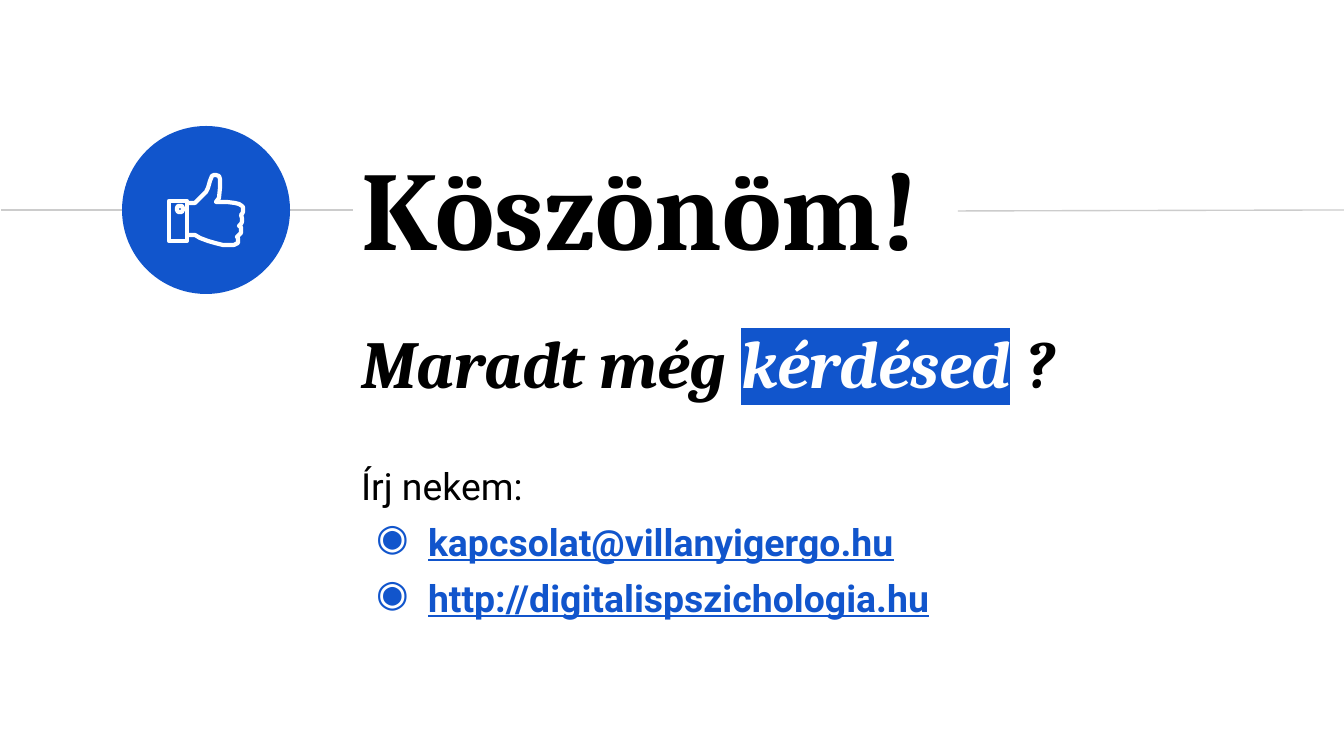
from math import cos, pi, sin

from lxml.etree import SubElement
from pptx import Presentation
from pptx.dml.color import RGBColor
from pptx.enum.shapes import MSO_CONNECTOR as CONN, MSO_SHAPE as SHAPE
from pptx.enum.text import MSO_ANCHOR as ANCHOR, MSO_AUTO_SIZE as AUTOSIZE, PP_ALIGN as ALIGN
from pptx.oxml.ns import qn
from pptx.util import Pt

EMU_PER_PX = 914400 / 134.4
COLORS = {"blue": "1155CC", "rule": "CCCCCC", "black": "000000", "white": "FFFFFF"}
SERIF, SANS = "Cambria", "Roboto"

CUFF = [(169, 201), (169, 241), (187, 241), (187, 201)]
BUTTON = [(round(180 + 3 * cos(k * pi / 6)), round(209 + 3 * sin(k * pi / 6)))
          for k in range(12)]
THUMB = [
    (188, 235), (195, 235), (200, 238), (208, 241), (215, 243), (223, 245),
    (234, 245), (238, 243), (238, 238), (237, 237), (239, 235), (241, 233),
    (241, 227), (239, 226), (241, 224), (242, 222), (242, 218), (241, 215),
    (242, 214), (243, 212), (243, 207), (242, 206), (239, 204), (235, 203),
    (227, 202), (216, 202), (219, 198), (220, 188), (220, 179), (219, 176),
    (216, 175), (214, 175), (212, 176), (210, 181), (208, 188), (206, 192),
    (199, 199), (195, 203), (188, 203),
]


def px(n):
    return round(n * EMU_PER_PX)


def rgb(name):
    return RGBColor.from_string(COLORS[name])


class Deck:
    def __init__(self, width, height):
        self.prs = Presentation()
        self.prs.slide_width, self.prs.slide_height = px(width), px(height)
        self.slide = self.prs.slides.add_slide(self.prs.slide_layouts[5])
        self.shapes = self.slide.shapes

    def frame(self, sp, anchor):
        tf = sp.text_frame
        tf.word_wrap = True
        tf.auto_size = AUTOSIZE.NONE
        tf.vertical_anchor = anchor
        tf.margin_left = tf.margin_right = tf.margin_top = tf.margin_bottom = px(13)
        return tf

    def style(self, r, font, size, color="black", bold=False, italic=False, underline=False):
        f = r.font
        f.name, f.size, f.bold, f.italic, f.underline = font, Pt(size), bold, italic, underline
        f.color.rgb = rgb(color)

    def highlight(self, r, color):
        rpr = r.font._element
        mark = SubElement(rpr, qn("a:highlight"))
        SubElement(mark, qn("a:srgbClr"), val=COLORS[color])
        rpr.find(qn("a:solidFill")).addnext(mark)

    def bullet(self, p, char, color):
        ppr = p._p.get_or_add_pPr()
        ppr.set("marL", str(px(67)))
        ppr.set("indent", str(px(-52)))
        SubElement(SubElement(ppr, qn("a:buClr")), qn("a:srgbClr"), val=COLORS[color])
        SubElement(ppr, qn("a:buChar"), char=char)

    def title(self, text, x, y, w, h):
        sp = self.shapes.title
        sp.left, sp.top, sp.width, sp.height = map(px, (x, y, w, h))
        tf = self.frame(sp, ANCHOR.MIDDLE)
        tf.text = text
        p = tf.paragraphs[0]
        p.alignment = ALIGN.LEFT
        self.style(p.runs[0], SERIF, 60, bold=True)

    def text_box(self, x, y, w, h):
        return self.frame(self.shapes.add_textbox(*map(px, (x, y, w, h))), ANCHOR.TOP)

    def line(self, x1, y1, x2, y2):
        c = self.shapes.add_connector(CONN.STRAIGHT, *map(px, (x1, y1, x2, y2)))
        c.line.color.rgb = rgb("rule")
        c.line.width = Pt(0.75)
        SubElement(c._element.spPr, qn("a:effectLst"))

    def circle(self, x, y, size):
        sp = self.shapes.add_shape(SHAPE.OVAL, *map(px, (x, y, size, size)))
        sp.shadow.inherit = False
        sp.fill.solid()
        sp.fill.fore_color.rgb = rgb("blue")
        sp.line.fill.background()

    def outline(self, *contours, close):
        """Draw the contours as one unfilled white shape."""
        builder = self.shapes.build_freeform(*contours[0][0], scale=EMU_PER_PX)
        for i, points in enumerate(contours):
            if i:
                builder.move_to(*points[0])
            builder.add_line_segments(points[1:], close=close)
        sp = builder.convert_to_shape()
        sp.shadow.inherit = False
        sp.fill.background()
        sp.line.color.rgb = rgb("white")
        sp.line.width = Pt(2.25)


def main():
    deck = Deck(1344, 756)
    deck.title("Köszönöm!", 348, 120, 722, 171)

    tf = deck.text_box(348, 308, 738, 330)
    p = tf.paragraphs[0]
    p.space_before = Pt(6)
    for text, color in (("Maradt még ", "black"), ("kérdésed", "white"), (" ?", "black")):
        r = p.add_run()
        r.text = text
        deck.style(r, SERIF, 36, color, bold=True, italic=True)
        if color == "white":
            deck.highlight(r, "blue")

    p = tf.add_paragraph()
    p.text = "Írj nekem:"
    p.space_before = Pt(33)
    deck.style(p.runs[0], SANS, 20)
    for address in ("kapcsolat@villanyigergo.hu", "http://digitalispszichologia.hu"):
        p = tf.add_paragraph()
        p.text = address
        p.space_before = Pt(6)
        deck.bullet(p, "◉", "blue")
        deck.style(p.runs[0], SANS, 20, "blue", bold=True, underline=True)

    deck.line(1, 210, 353, 210)
    deck.line(958, 211, 1344, 210)
    deck.circle(122, 126, 168)
    deck.outline(CUFF, BUTTON, close=True)
    deck.outline(THUMB, close=False)
    deck.prs.save("out.pptx")


if __name__ == "__main__":
    main()
